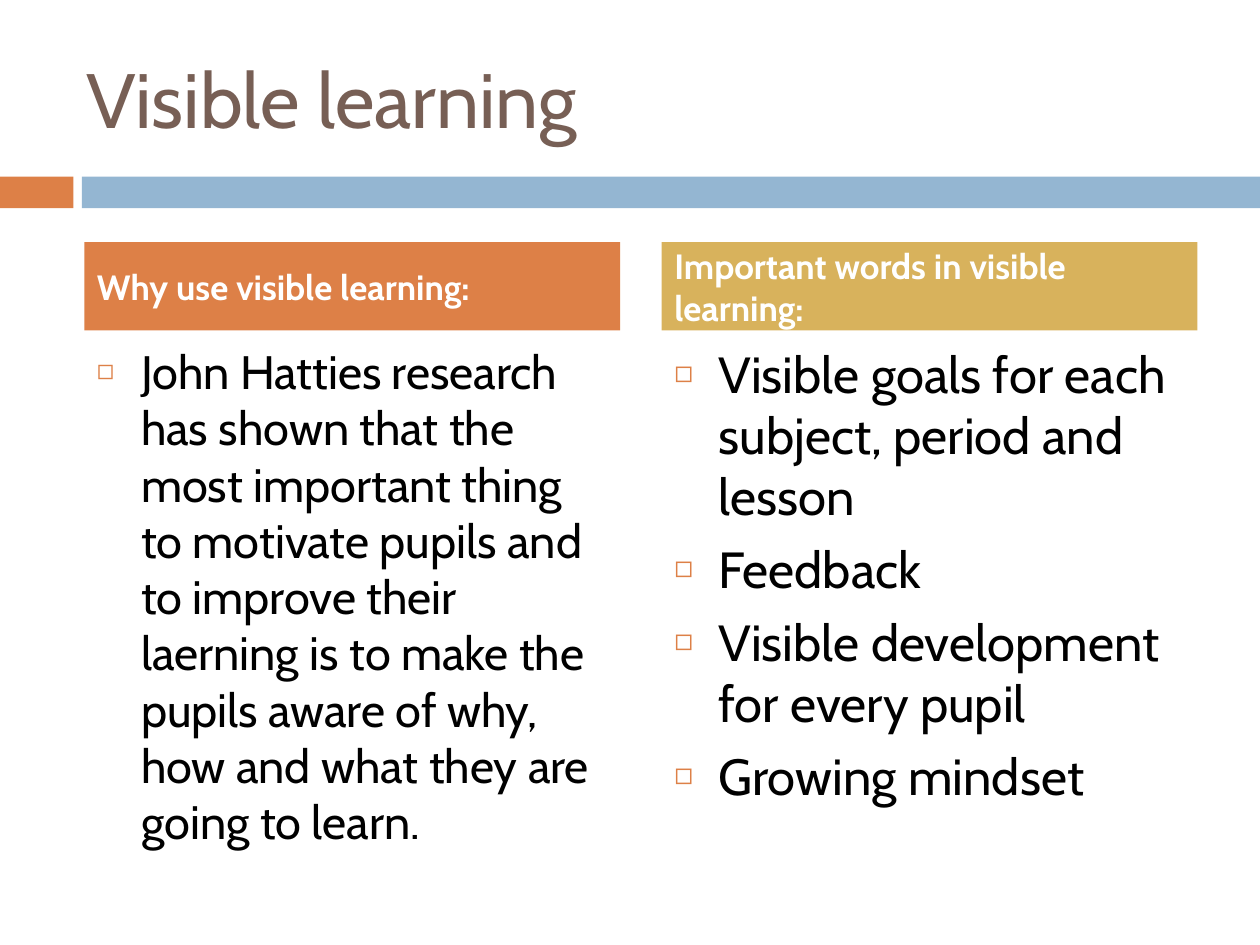
from lxml.etree import SubElement
from pptx import Presentation
from pptx.dml.color import RGBColor
from pptx.enum.shapes import MSO_SHAPE
from pptx.enum.text import MSO_ANCHOR, MSO_AUTO_SIZE, PP_ALIGN
from pptx.oxml.ns import qn
from pptx.util import Cm, Pt

ORANGE = RGBColor(0xDD, 0x80, 0x47)
BLUE = RGBColor(0x94, 0xB6, 0xD2)
GOLD = RGBColor(0xD8, 0xB2, 0x5C)
BROWN = RGBColor(0x77, 0x5F, 0x55)
BLACK = RGBColor(0, 0, 0)
WHITE = RGBColor(0xFF, 0xFF, 0xFF)

INDENT = Cm(0.89)
COLUMN_WIDTH = Cm(10.8)
COLUMNS = [
    (Cm(1.7), ORANGE, "Why use visible learning:", 26.8, [
        "John Hatties research has shown that the most important thing to "
        "motivate pupils and to improve their laerning is to make the pupils "
        "aware of why, how and what they are going to learn.",
    ]),
    (Cm(13.34), GOLD, "Important words in visible learning:", 29, [
        "Visible goals for each subject, period and lesson",
        "Feedback",
        "Visible development for every pupil",
        "Growing mindset",
    ]),
]


def fill_placeholder(placeholder, box, lines, color, anchor, bulleted=False, **font_format):
    placeholder.left, placeholder.top, placeholder.width, placeholder.height = box
    frame = placeholder.text_frame
    frame.text = "\n".join(lines)
    frame.auto_size = MSO_AUTO_SIZE.NONE
    frame.vertical_anchor = anchor
    for position, paragraph in enumerate(frame.paragraphs):
        if bulleted:
            add_bullet(paragraph)
        paragraph.alignment = PP_ALIGN.LEFT
        paragraph.space_before = Pt(7 if position else 0)
        for attribute, value in {"name": "Cabin", **font_format}.items():
            setattr(paragraph.font, attribute, value)
        paragraph.font.color.rgb = color


def add_bullet(paragraph):
    """Give the paragraph a small orange square and a hanging indent."""
    properties = paragraph._p.get_or_add_pPr()
    properties.set("marL", str(INDENT))
    properties.set("indent", str(-INDENT))
    bullet_color = SubElement(properties, qn("a:buClr"))
    SubElement(bullet_color, qn("a:srgbClr"), val=str(ORANGE))
    SubElement(properties, qn("a:buSzPct"), val="60000")
    SubElement(properties, qn("a:buChar"), char="◻")


presentation = Presentation()
presentation.slide_width = Cm(25.4)
presentation.slide_height = Cm(19.05)
slide = presentation.slides.add_slide(presentation.slide_layouts.get_by_name("Comparison"))
title, *column_parts = slide.placeholders

for left, width, color in [(Cm(0), Cm(1.48), ORANGE), (Cm(1.65), Cm(23.75), BLUE)]:
    band = slide.shapes.add_shape(MSO_SHAPE.RECTANGLE, left, Cm(3.56), width, Cm(0.64))
    band.shadow.inherit = False
    band.fill.solid()
    band.fill.fore_color.rgb = color
    band.line.fill.background()

fill_placeholder(title, (Cm(1.48), Cm(0.76), Cm(22.65), Cm(2.41)), ["Visible learning"],
                 BROWN, MSO_ANCHOR.MIDDLE, size=Pt(44))

for column, heading, points in zip(COLUMNS, column_parts[::2], column_parts[1::2]):
    left, heading_color, heading_text, point_size, point_lines = column
    fill_placeholder(heading, (left, Cm(4.88), COLUMN_WIDTH, Cm(1.78)), [heading_text],
                     WHITE, MSO_ANCHOR.MIDDLE, size=Pt(20), bold=True)
    heading.fill.solid()
    heading.fill.fore_color.rgb = heading_color
    fill_placeholder(points, (left, Cm(6.78), COLUMN_WIDTH, Cm(9.96)), point_lines,
                     BLACK, MSO_ANCHOR.TOP, bulleted=True, size=Pt(point_size))

presentation.save("out.pptx")
